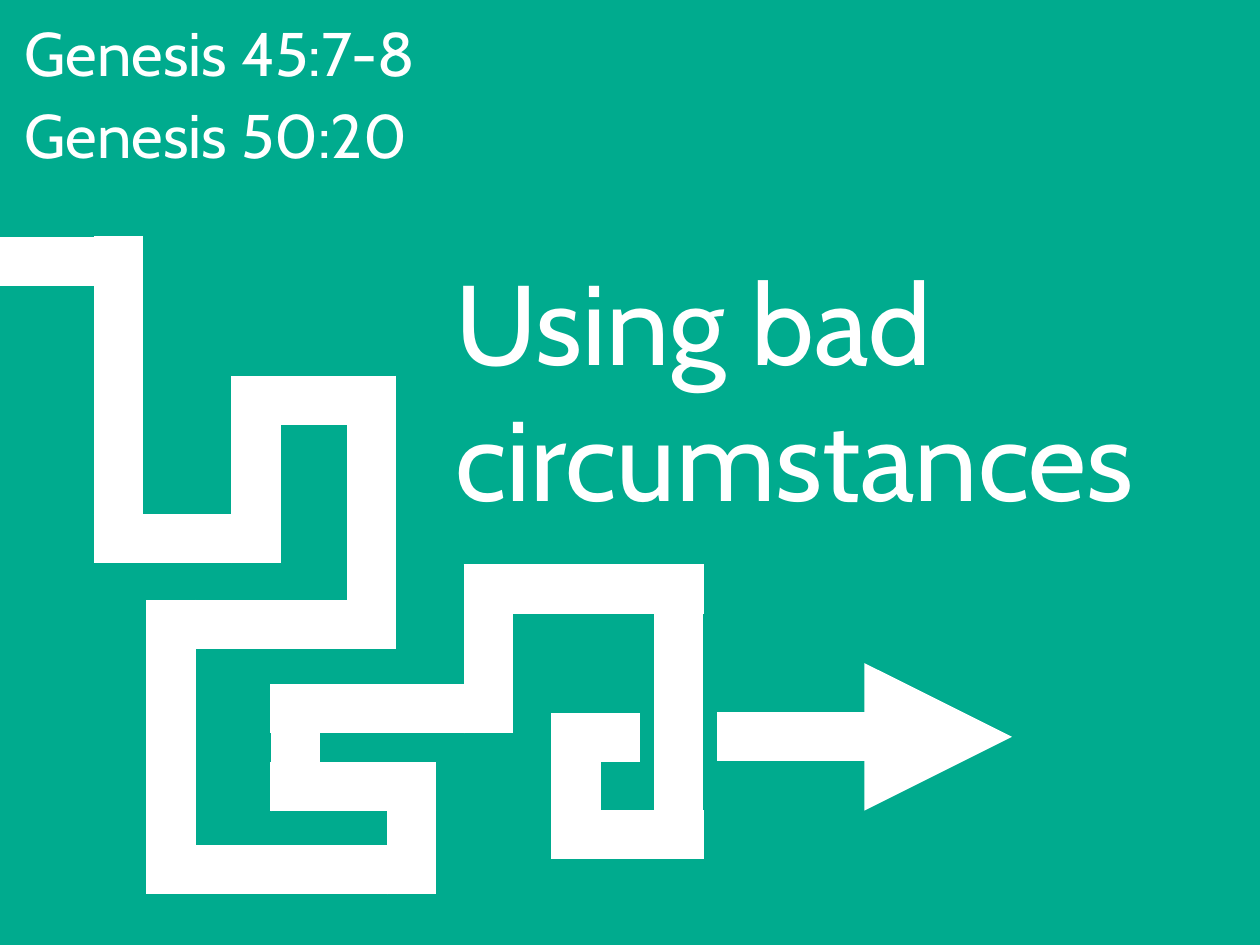
from itertools import pairwise

from lxml import etree
from pptx import Presentation
from pptx.dml.color import RGBColor
from pptx.enum.shapes import MSO_CONNECTOR as CONN, MSO_SHAPE as SHAPE
from pptx.enum.text import MSO_ANCHOR as ANCHOR, MSO_AUTO_SIZE as AUTO
from pptx.oxml.ns import qn
from pptx.util import Cm, Pt

# Content: text, size, left, top, width, height (cm)
TEXTS = [
    ("Genesis 45:7-8", 50, 0.56, 0.15, 19.76, 2.69),
    ("Genesis 50:20", 50, 0.56, 2.49, 19.76, 2.69),
    ("Using bad circumstances", 92, 12.9, 6.6, 27.43 - 4.5, 9.09),
]
# Corners of the winding road along its centre line (cm)
ROAD = [
    (0.71, 7.49), (3.4, 7.49), (3.4, 15.44), (7.34, 15.44), (7.34, 11.48),
    (10.64, 11.48), (10.64, 17.91), (4.9, 17.91), (4.9, 24.94),
    (11.79, 24.94), (11.79, 22.56), (8.46, 22.56), (8.46, 20.32),
    (14, 20.32), (14, 16.89), (19.46, 16.89), (19.46, 23.93),
    (16.51, 23.93), (16.51, 21.16), (17.63, 21.16),
]
ARROW = (20.55, 21.13), (29.01, 21.13)
GREEN, WHITE = "00AB8E", "FFFFFF"
FONT = "Cabin"
STROKE = 40     # points
HALF = 0.71     # half the stroke in cm

prs = Presentation()
prs.slide_width, prs.slide_height = Cm(36.12), Cm(27.1)
s = prs.slides.add_slide(prs.slide_layouts[6])


def rgb(code):
    return RGBColor.from_string(code)


def add_line(start, end):
    line = s.shapes.add_connector(CONN.STRAIGHT, *map(Cm, start + end))
    line.line.color.rgb = rgb(WHITE)
    line.line.width = Pt(STROKE)
    etree.SubElement(line._element.spPr, qn("a:effectLst"))
    return line


def stretch(a, b):
    """Move both ends of an axis outwards by half a stroke."""
    step = HALF * ((b > a) - (b < a))
    return a - step, b + step


# Background
bg = s.shapes.add_shape(SHAPE.RECTANGLE, 0, 0, prs.slide_width, prs.slide_height)
bg.shadow.inherit = False
bg.fill.solid()
bg.fill.fore_color.rgb = rgb(GREEN)
bg.line.fill.background()

# Winding road, with the segments overlapping at the corners
for (x1, y1), (x2, y2) in pairwise(ROAD):
    x1, x2 = stretch(x1, x2)
    y1, y2 = stretch(y1, y2)
    add_line((x1, y1), (x2, y2))

# Arrow
arrow = add_line(*ARROW)
etree.SubElement(arrow.line._get_or_add_ln(), qn("a:tailEnd"), type="triangle")

# Texts
for text, size, *box in TEXTS:
    tf = s.shapes.add_textbox(*map(Cm, box)).text_frame
    tf.word_wrap = True
    tf.auto_size = AUTO.SHAPE_TO_FIT_TEXT
    tf.vertical_anchor = ANCHOR.MIDDLE
    tf.margin_left = tf.margin_right = tf.margin_top = tf.margin_bottom = Cm(0.15)
    p = tf.paragraphs[0]
    p.text = text
    p.font.name, p.font.size = FONT, Pt(size)
    p.font.color.rgb = rgb(WHITE)

prs.save("out.pptx")
